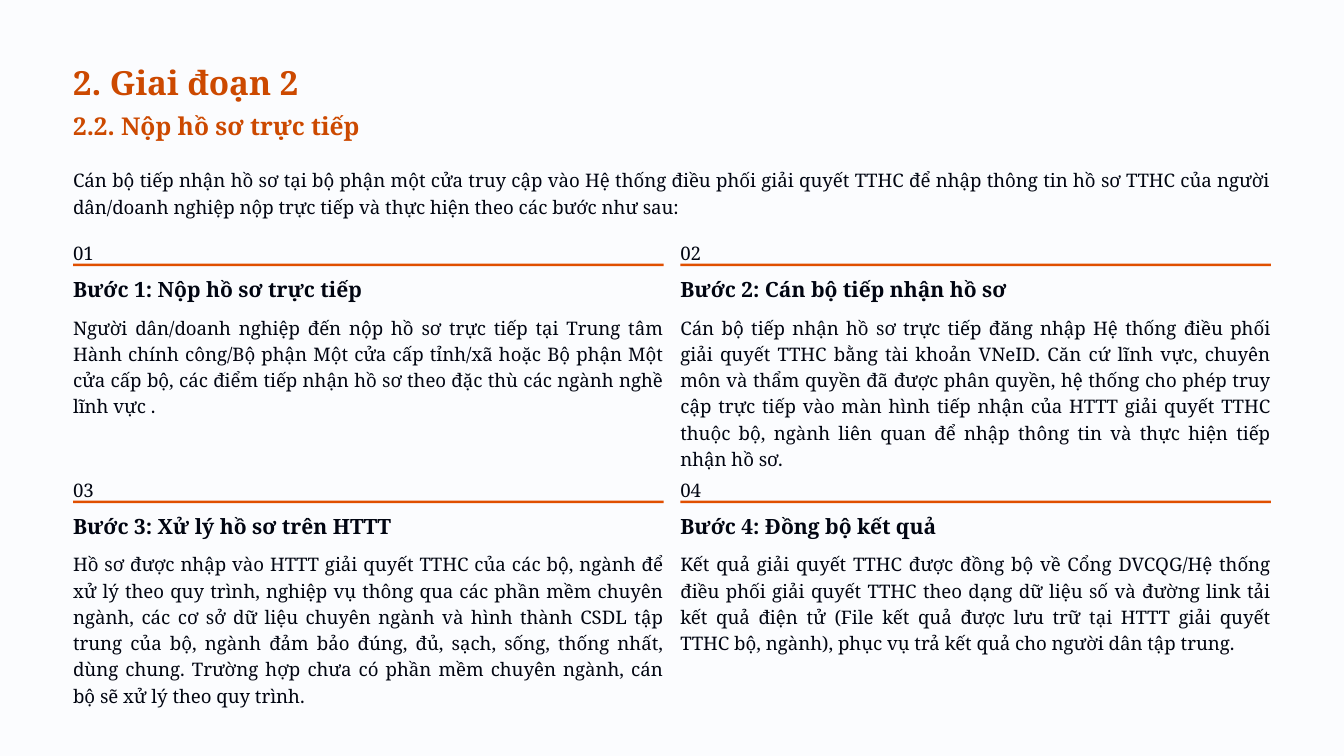
from pptx import Presentation
from pptx.dml.color import RGBColor
from pptx.enum.shapes import MSO_SHAPE as Shape
from pptx.enum.text import MSO_ANCHOR as Anchor, MSO_AUTO_SIZE as AutoSize, PP_ALIGN as Align
from pptx.util import Inches, Pt

PAPER = RGBColor(0xFB, 0xFC, 0xFE)
RUST = RGBColor(0xCC, 0x49, 0x00)
ORANGE = RGBColor(0xE0, 0x4F, 0x00)
INK = RGBColor(0x01, 0x05, 0x11)

INTRO = (
    "Cán bộ tiếp nhận hồ sơ tại bộ phận một cửa truy cập vào Hệ thống điều phối giải quyết TTHC "
    "để nhập thông tin hồ sơ TTHC của người dân/doanh nghiệp nộp trực tiếp và thực hiện theo các "
    "bước như sau:"
)
STEPS = [
    ("Nộp hồ sơ trực tiếp",
     "Người dân/doanh nghiệp đến nộp hồ sơ trực tiếp tại Trung tâm Hành chính công/Bộ phận Một cửa "
     "cấp tỉnh/xã hoặc Bộ phận Một cửa cấp bộ, các điểm tiếp nhận hồ sơ theo đặc thù các ngành nghề "
     "lĩnh vực ."),
    ("Cán bộ tiếp nhận hồ sơ",
     "Cán bộ tiếp nhận hồ sơ trực tiếp đăng nhập Hệ thống điều phối giải quyết TTHC bằng tài khoản "
     "VNeID. Căn cứ lĩnh vực, chuyên môn và thẩm quyền đã được phân quyền, hệ thống cho phép truy cập "
     "trực tiếp vào màn hình tiếp nhận của HTTT giải quyết TTHC thuộc bộ, ngành liên quan để nhập "
     "thông tin và thực hiện tiếp nhận hồ sơ."),
    ("Xử lý hồ sơ trên HTTT",
     "Hồ sơ được nhập vào HTTT giải quyết TTHC của các bộ, ngành để xử lý theo quy trình, nghiệp vụ "
     "thông qua các phần mềm chuyên ngành, các cơ sở dữ liệu chuyên ngành và hình thành CSDL tập trung "
     "của bộ, ngành đảm bảo đúng, đủ, sạch, sống, thống nhất, dùng chung. Trường hợp chưa có phần mềm "
     "chuyên ngành, cán bộ sẽ xử lý theo quy trình."),
    ("Đồng bộ kết quả",
     "Kết quả giải quyết TTHC được đồng bộ về Cổng DVCQG/Hệ thống điều phối giải quyết TTHC theo dạng "
     "dữ liệu số và đường link tải kết quả điện tử (File kết quả được lưu trữ tại HTTT giải quyết TTHC "
     "bộ, ngành), phục vụ trả kết quả cho người dân tập trung."),
]


class StepSlide:
    font = "Noto Serif"
    margin, column, gutter = 0.87, 7.03, 0.2
    first_row, row_pitch = 2.83, 2.82

    def __init__(self, deck):
        self.slide = deck.slides.add_slide(deck.slide_layouts[5])
        background = self.slide.background.fill
        background.solid()
        background.fore_color.rgb = PAPER

    def cell(self, index):
        row, col = divmod(index, 2)
        left = self.margin + col * (self.column + self.gutter)
        return left, self.first_row + row * self.row_pitch

    def typeset(self, holder, words, size, leading, color=INK, bold=False, align=Align.JUSTIFY):
        frame = holder.text_frame
        frame.word_wrap = True
        frame.auto_size = AutoSize.NONE
        frame.vertical_anchor = Anchor.TOP
        frame.margin_left = frame.margin_right = frame.margin_top = frame.margin_bottom = 0
        frame.text = words
        line = frame.paragraphs[0]
        line.alignment = align
        line.line_spacing = Pt(leading)
        line.font.name = self.font
        line.font.size = Pt(size)
        line.font.bold = bold
        line.font.color.rgb = color

    def title(self, words, top, height):
        heading = self.slide.shapes.title
        heading.left, heading.top = Inches(self.margin), Inches(top)
        heading.width, heading.height = Inches(2 * self.column + self.gutter), Inches(height)
        self.typeset(heading, words, 28.5, 35.5, RUST, True, Align.LEFT)

    def text(self, words, left, top, height, columns=1, size=16, leading=22.5, **style):
        width = columns * self.column + (columns - 1) * self.gutter
        area = map(Inches, (left, top, width, height))
        self.typeset(self.slide.shapes.add_textbox(*area), words, size, leading, **style)

    def rule(self, left, top):
        area = map(Inches, (left, top, self.column, 0.03))
        bar = self.slide.shapes.add_shape(Shape.RECTANGLE, *area)
        bar.shadow.inherit = False
        bar.fill.solid()
        bar.fill.fore_color.rgb = ORANGE
        bar.line.fill.background()

    def step(self, index, name, details):
        left, top = self.cell(index)
        number = index + 1
        self.text(f"{number:02}", left, top, 0.25)
        self.rule(left, top + 0.31)
        self.text(f"Bước {number}: {name}", left, top + 0.46, 0.31, size=18, leading=22, bold=True)
        self.text(details, left, top + 0.89, 1.59)


def main():
    deck = Presentation()
    deck.slide_width, deck.slide_height = Inches(16), Inches(9)
    page = StepSlide(deck)
    page.title("2. Giai đoạn 2", 0.72, 0.5)
    page.text("2.2. Nộp hồ sơ trực tiếp", page.margin, 1.3, 0.37, columns=2, size=21, leading=26.5,
              color=RUST, bold=True, align=Align.LEFT)
    page.text(INTRO, page.margin, 1.97, 0.63, columns=2)
    for index, (name, details) in enumerate(STEPS):
        page.step(index, name, details)
    deck.save("out.pptx")


if __name__ == "__main__":
    main()
